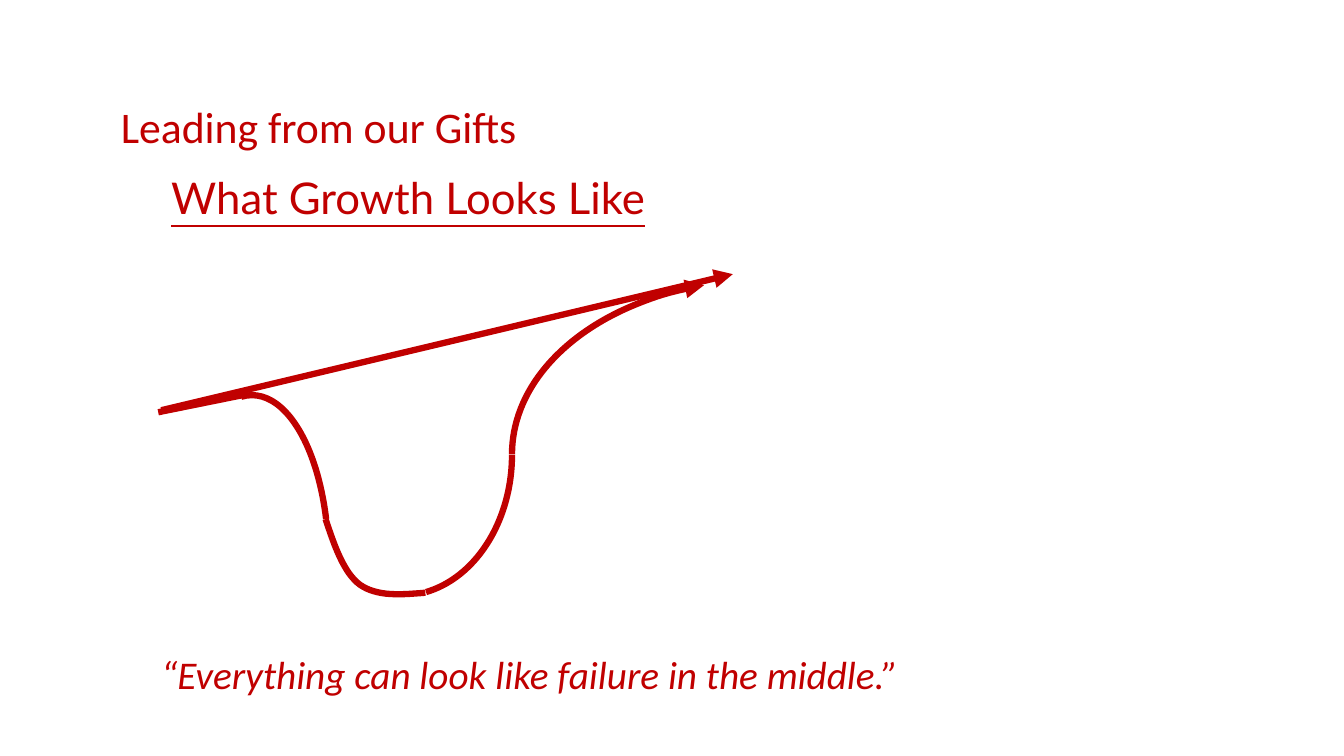
from pptx import Presentation
from pptx.dml.color import RGBColor as Rgb
from pptx.enum.shapes import MSO_CONNECTOR as Conn, MSO_SHAPE as Kind
from pptx.enum.text import MSO_ANCHOR as Anchor
from pptx.oxml.ns import qn
from pptx.util import Pt
from lxml.etree import SubElement as add_sub

# Content: text, box (left, top, width, height), style, anchor
TEXTS = [
    ("Leading from our Gifts", (79.2, 64.8, 489.6, 50.4), "head", Anchor.MIDDLE),
    ("What Growth Looks Like", (115.2, 118.8, 776.88, 50.4), "topic", Anchor.TOP),
    ("“Everything can look like failure in the middle.”",
     (108, 444.24, 557.28, 77.76), "quote", Anchor.TOP),
]
# Straight lines: start, end, arrow end
LINES = [
    ((115.2, 293.04), (523.44, 195.84), "tailEnd"),
    ((113.04, 294.48), (173.52, 282.24), None),
]
# Arcs: box, start and end angle in degrees, flip, arrow end
ARCS = [
    ((125.28, 282.24, 109.44, 236.88), (266.25, 330.52), None, None),
    ((207.36, 223.92, 158.4, 201.6), (280.26, 0), "flipV", None),
    ((365.76, 200.16, 360, 248.4), (289.57, 0), "flipH", "headEnd"),
]
# Bottom of the dip: Bezier curves, each with four control points
DIP = [
    ((232.56, 370.8), (239.04, 390.24), (245.52, 408.96), (257.04, 417.6)),
    ((257.04, 417.6), (269.28, 426.24), (286.56, 424.8), (303.84, 423.36)),
]
STEPS = 16

THEME = {
    "red": Rgb(0xC0, 0, 0),
    "line": 4.5,
    "head": dict(name="Calibri", size=Pt(31.2)),
    "topic": dict(name="Lato", size=Pt(31.2), underline=True),
    "quote": dict(name="Calibri", size=Pt(28), italic=True),
}


def pts(vals):
    return [Pt(v) for v in vals]


def stroke(item, arrow=None):
    item.line.color.rgb = THEME["red"]
    item.line.width = Pt(THEME["line"])
    if arrow:
        add_sub(item.line._get_or_add_ln(), qn("a:" + arrow), type="triangle")


def bezier(ctrl, t):
    """Point at t, from 0 to 1, on a cubic curve."""
    wts = ((1 - t) ** 3, 3 * t * (1 - t) ** 2, 3 * t * t * (1 - t), t ** 3)
    return [Pt(sum(w * p[i] for w, p in zip(wts, ctrl))) for i in (0, 1)]


deck = Presentation()
deck.slide_width, deck.slide_height = Pt(960), Pt(540)
shapes = deck.slides.add_slide(deck.slide_layouts[6]).shapes

# Text
for text, box, style, anchor in TEXTS:
    frame = shapes.add_textbox(*pts(box)).text_frame
    frame.word_wrap = True
    frame.vertical_anchor = anchor
    para = frame.paragraphs[0]
    para.text = text
    para.font.color.rgb = THEME["red"]
    for key, val in THEME[style].items():
        setattr(para.font, key, val)
    if style == "quote":
        para.line_spacing = 1.5
        para.space_after = Pt(6)

# Straight path
for start, end, arrow in LINES:
    link = shapes.add_connector(Conn.STRAIGHT, *pts(start + end))
    add_sub(link.element.spPr, qn("a:effectLst"))
    stroke(link, arrow)

# Arcs of the real path
for box, angles, flip, arrow in ARCS:
    arc = shapes.add_shape(Kind.ARC, *pts(box))
    for i, angle in enumerate(angles):
        arc.adjustments[i] = angle * 0.6
    if flip:
        arc.element.spPr.xfrm.set(flip, "1")
    arc.shadow.inherit = False
    arc.fill.background()
    stroke(arc, arrow)

# Dip in the middle
trail = [bezier(ctrl, n / STEPS) for ctrl in DIP for n in range(1, STEPS + 1)]
pen = shapes.build_freeform(*bezier(DIP[0], 0), scale=1.0)
pen.add_line_segments(trail, close=False)
dip = pen.convert_to_shape()
dip.shadow.inherit = False
dip.fill.background()
stroke(dip)

deck.save("out.pptx")
